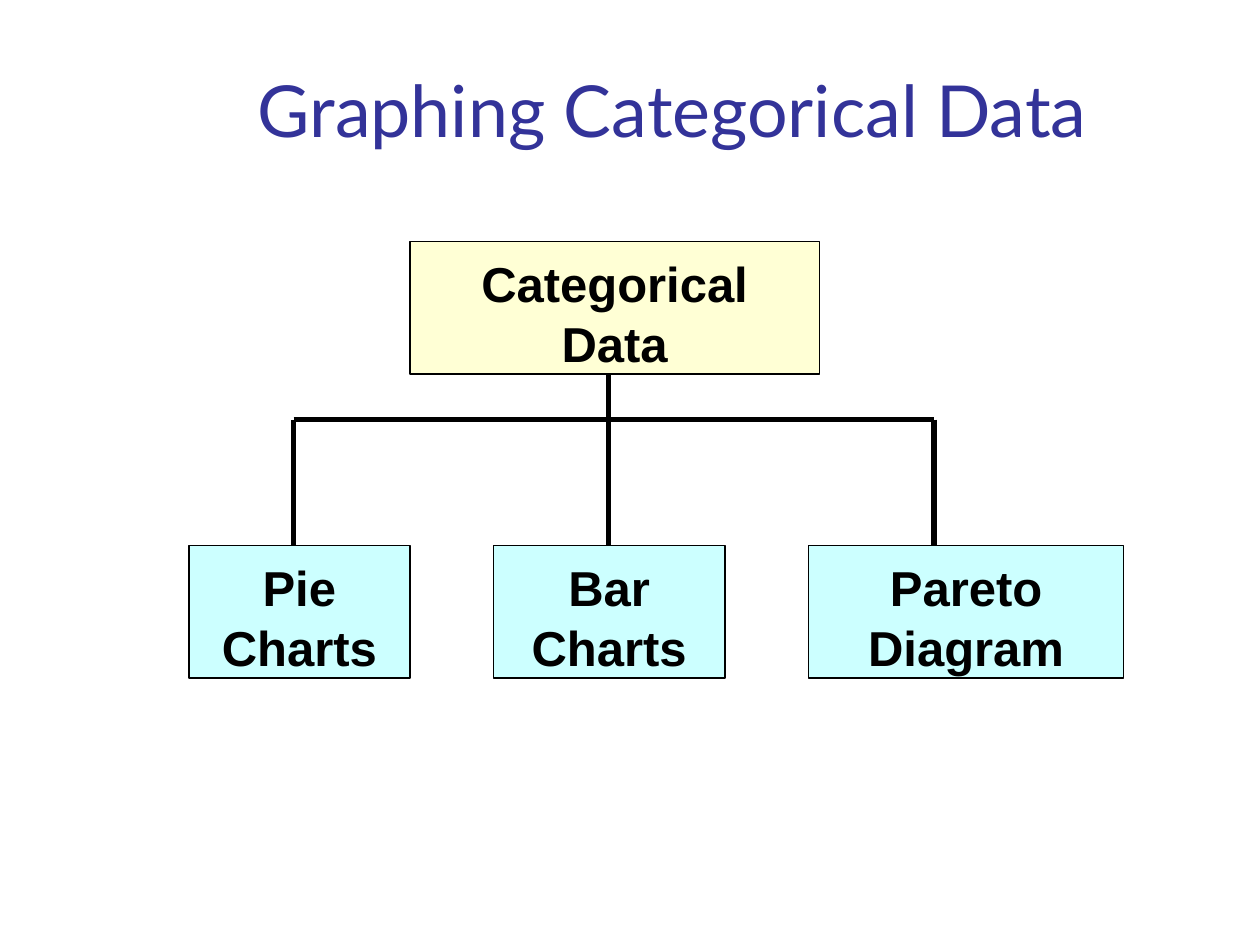
from lxml import etree
from pptx import Presentation
from pptx.dml.color import RGBColor
from pptx.enum.shapes import MSO_CONNECTOR as Connector, MSO_SHAPE as Shape
from pptx.enum.text import MSO_ANCHOR as Anchor, PP_ALIGN as Align
from pptx.oxml.ns import qn
from pptx.util import Cm, Pt

INDIGO = RGBColor(0x33, 0x33, 0x99)
BLACK = RGBColor(0, 0, 0)
CREAM = RGBColor(0xFF, 0xFF, 0xD5)
AQUA = RGBColor(0xCC, 0xFF, 0xFF)

# Levels of the tree, in centimetres
ROOT_TOP, BRANCH_Y, LEAF_TOP = 4.87, 8.46, 11.0
BOX_HEIGHT = 2.67
LEFT_X, TRUNK_X, RIGHT_X = 5.92, 12.27, 18.83
LEAVES = [
    ("Pie Charts", 3.81, 4.45),
    ("Bar Charts", 9.95, 4.66),
    ("Pareto Diagram", 16.3, 6.35),
]


def add_title(page, text):
    box = page.shapes.add_textbox(Cm(2.74), Cm(1.07), Cm(21.64), Cm(2.11))
    frame = box.text_frame
    frame.word_wrap = True
    frame.vertical_anchor = Anchor.BOTTOM
    para = frame.paragraphs[0]
    para.text = text
    para.alignment = Align.CENTER
    para.line_spacing = 1.1
    para.font.name = "Lato"
    para.font.size = Pt(41)
    para.font.color.rgb = INDIGO


def add_node(page, text, left, top, width, fill):
    node = page.shapes.add_shape(
        Shape.RECTANGLE, Cm(left), Cm(top), Cm(width), Cm(BOX_HEIGHT))
    node.shadow.inherit = False
    node.fill.solid()
    node.fill.fore_color.rgb = fill
    node.line.color.rgb = BLACK
    node.line.width = Pt(1)
    frame = node.text_frame
    frame.word_wrap = True
    frame.vertical_anchor = Anchor.TOP
    frame.margin_left = frame.margin_right = Cm(0.35)
    frame.margin_top = Cm(0.2)
    frame.margin_bottom = Cm(0.1)
    para = frame.paragraphs[0]
    para.text = text
    para.alignment = Align.CENTER
    para.line_spacing = 1.03
    para.font.name = "Arial"
    para.font.size = Pt(28)
    para.font.bold = True
    para.font.color.rgb = BLACK


def add_line(page, x1, y1, x2, y2):
    line = page.shapes.add_connector(
        Connector.STRAIGHT, Cm(x1), Cm(y1), Cm(x2), Cm(y2))
    line.line.color.rgb = BLACK
    line.line.width = Pt(3)
    etree.SubElement(line._element.spPr, qn("a:effectLst"))


def main():
    deck = Presentation()
    deck.slide_width, deck.slide_height = Cm(25.4), Cm(19.05)
    page = deck.slides.add_slide(deck.slide_layouts[6])

    add_title(page, "Graphing Categorical Data")

    # Branches, behind the boxes
    add_line(page, TRUNK_X, ROOT_TOP + BOX_HEIGHT, TRUNK_X, LEAF_TOP)
    add_line(page, LEFT_X, BRANCH_Y, RIGHT_X, BRANCH_Y)
    for x in (LEFT_X, RIGHT_X):
        add_line(page, x, BRANCH_Y, x, LEAF_TOP)

    # Root and leaves
    add_node(page, "Categorical Data", 8.26, ROOT_TOP, 8.26, CREAM)
    for text, left, width in LEAVES:
        add_node(page, text, left, LEAF_TOP, width, AQUA)

    deck.save("out.pptx")


if __name__ == "__main__":
    main()
